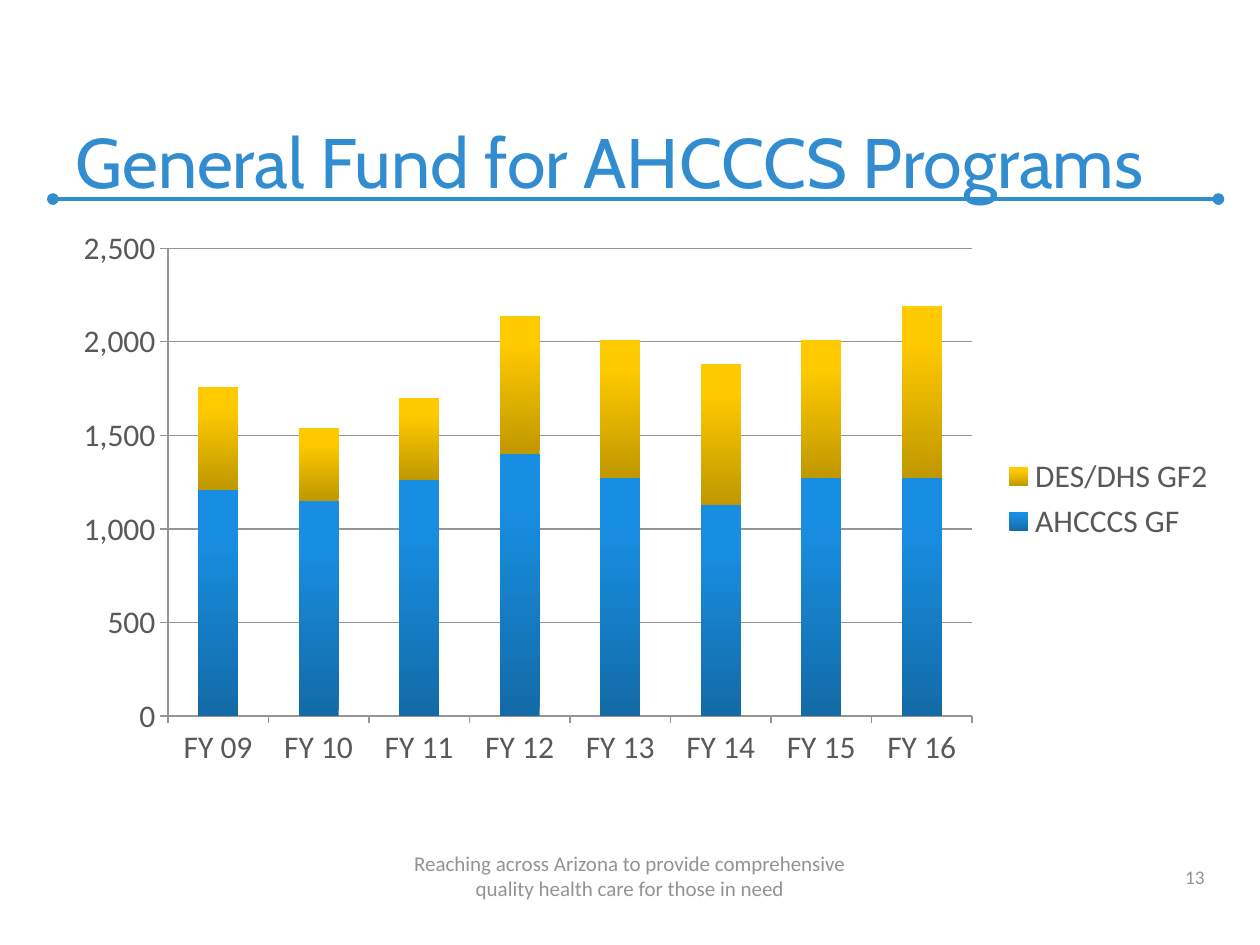
from dataclasses import dataclass

from lxml.etree import SubElement
from pptx import Presentation
from pptx.chart.data import CategoryChartData
from pptx.dml.color import RGBColor
from pptx.enum.chart import XL_CHART_TYPE as ChartType, XL_LEGEND_POSITION as LegendPos
from pptx.enum.chart import XL_TICK_MARK as TickMark
from pptx.enum.shapes import MSO_CONNECTOR as Connector
from pptx.enum.text import MSO_ANCHOR as Anchor, MSO_AUTO_SIZE as AutoSize, PP_ALIGN as Align
from pptx.oxml import parse_xml
from pptx.oxml.ns import nsdecls, qn
from pptx.util import Inches, Pt


@dataclass(frozen=True)
class Theme:
    heading_font: str = "Cabin"
    body_font: str = "Calibri"
    heading: RGBColor = RGBColor(0x31, 0x8D, 0xCF)
    rule: RGBColor = RGBColor(0x31, 0x8D, 0xCC)
    label: RGBColor = RGBColor(0x59, 0x59, 0x59)
    muted: RGBColor = RGBColor(0x93, 0x93, 0x93)
    grid: RGBColor = RGBColor(0x95, 0x95, 0x95)
    blue_shades: tuple = (RGBColor(0x13, 0x6B, 0xA6), RGBColor(0x18, 0x8E, 0xE2))
    gold_shades: tuple = (RGBColor(0xC0, 0x98, 0x00), RGBColor(0xFF, 0xCA, 0x00))
    title_size: Pt = Pt(40)
    chart_size: Pt = Pt(18)
    footer_size: Pt = Pt(12)
    number_size: Pt = Pt(11)


THEME = Theme()
YEARS = [f"FY {year:02}" for year in range(9, 17)]
FUNDS = [
    ("AHCCCS GF", (1210, 1150, 1260, 1400, 1270, 1130, 1270, 1270), THEME.blue_shades),
    ("DES/DHS GF2", (550, 390, 440, 740, 740, 750, 740, 920), THEME.gold_shades),
]


def style_font(font, name, size, color):
    font.name, font.size = name, size
    font.color.rgb = color


def add_heading(slide, left, top, width, height):
    heading = slide.shapes.title
    heading.left, heading.top, heading.width, heading.height = left, top, width, height
    frame = heading.text_frame
    frame.text = "General Fund for AHCCCS Programs"
    frame.auto_size = AutoSize.NONE
    frame.vertical_anchor = Anchor.BOTTOM
    frame.paragraphs[0].alignment = Align.LEFT
    style_font(frame.paragraphs[0].runs[0].font, THEME.heading_font,
               THEME.title_size, THEME.heading)


def add_rule(slide, left, top, width):
    rule = slide.shapes.add_connector(Connector.STRAIGHT, left, top, left + width, top)
    rule.line.color.rgb = THEME.rule
    rule.line.width = Pt(2.25)
    outline = rule.line._get_or_add_ln()
    for end in ("a:headEnd", "a:tailEnd"):
        SubElement(outline, qn(end), type="oval")
    SubElement(rule.element.spPr, qn("a:effectLst"))
    slide.shapes.title.element.addprevious(rule.element)


def style_axis(axis):
    axis.major_tick_mark = TickMark.OUTSIDE
    axis.minor_tick_mark = TickMark.NONE
    axis.format.line.color.rgb = THEME.grid
    axis.format.line.width = Pt(0.75)


def add_fund_chart(slide, left, top, width, height):
    fund_data = CategoryChartData(number_format="#,##0")
    fund_data.categories = YEARS
    for name, amounts, _ in FUNDS:
        fund_data.add_series(name, amounts)
    chart = slide.shapes.add_chart(
        ChartType.COLUMN_STACKED, left, top, width, height, fund_data).chart
    style_font(chart.font, THEME.body_font, THEME.chart_size, THEME.label)
    chart.has_title = False
    chart.has_legend = True
    chart.legend.position = LegendPos.RIGHT
    chart.legend.include_in_layout = False

    amount_axis = chart.value_axis
    for axis in (chart.category_axis, amount_axis):
        style_axis(axis)
    amount_axis.minimum_scale, amount_axis.maximum_scale = 0, 2500
    amount_axis.major_unit = 500
    amount_axis.tick_labels.number_format = "#,##0"
    amount_axis.tick_labels.number_format_is_linked = False
    amount_axis.major_gridlines.format.line.color.rgb = THEME.grid
    amount_axis.major_gridlines.format.line.width = Pt(0.75)

    plot = chart.plots[0]
    plot.gap_width, plot.overlap, plot.vary_by_categories = 150, 100, False
    for series, (_, _, shades) in zip(plot.series, FUNDS):
        fill = series.format.fill
        fill.gradient()
        fill.gradient_angle = 90
        for stop, shade, position in zip(fill.gradient_stops, shades, (0, 0.8)):
            stop.color.rgb = shade
            stop.position = position
    place_plot(chart, 0.09, 0.05, 0.69, 0.84)


def place_plot(chart, x, y, w, h):
    plot_area = chart._chartSpace.chart.plotArea
    for old_layout in plot_area.findall(qn("c:layout")):
        plot_area.remove(old_layout)
    plot_area.insert(0, parse_xml(
        f'<c:layout {nsdecls("c")}><c:manualLayout><c:layoutTarget val="inner"/>'
        '<c:xMode val="edge"/><c:yMode val="edge"/>'
        f'<c:x val="{x}"/><c:y val="{y}"/><c:w val="{w}"/><c:h val="{h}"/>'
        '</c:manualLayout></c:layout>'))


def add_caption(slide, left, top, width, height, text, size, align):
    frame = slide.shapes.add_textbox(left, top, width, height).text_frame
    frame.word_wrap = True
    frame.vertical_anchor = Anchor.BOTTOM
    frame.text = text
    for paragraph in frame.paragraphs:
        paragraph.alignment = align
        for run in paragraph.runs:
            style_font(run.font, THEME.body_font, size, THEME.muted)


def main():
    deck = Presentation()
    deck.slide_width, deck.slide_height = Inches(10), Inches(7.5)
    slide = deck.slides.add_slide(deck.slide_layouts[5])
    add_heading(slide, Inches(0.5), Inches(0.33), Inches(9), Inches(1.33))
    add_rule(slide, Inches(0.42), Inches(1.58), Inches(9.25))
    add_fund_chart(slide, Inches(0.5), Inches(1.75), Inches(9.25), Inches(4.42))
    add_caption(slide, Inches(7.33), Inches(6.78), Inches(2.33), Inches(0.32),
                "13", THEME.number_size, Align.RIGHT)
    add_caption(slide, Inches(0), Inches(6.78), Inches(10), Inches(0.42),
                "Reaching across Arizona to provide comprehensive\n"
                "quality health care for those in need",
                THEME.footer_size, Align.CENTER)
    deck.save("out.pptx")


if __name__ == "__main__":
    main()
